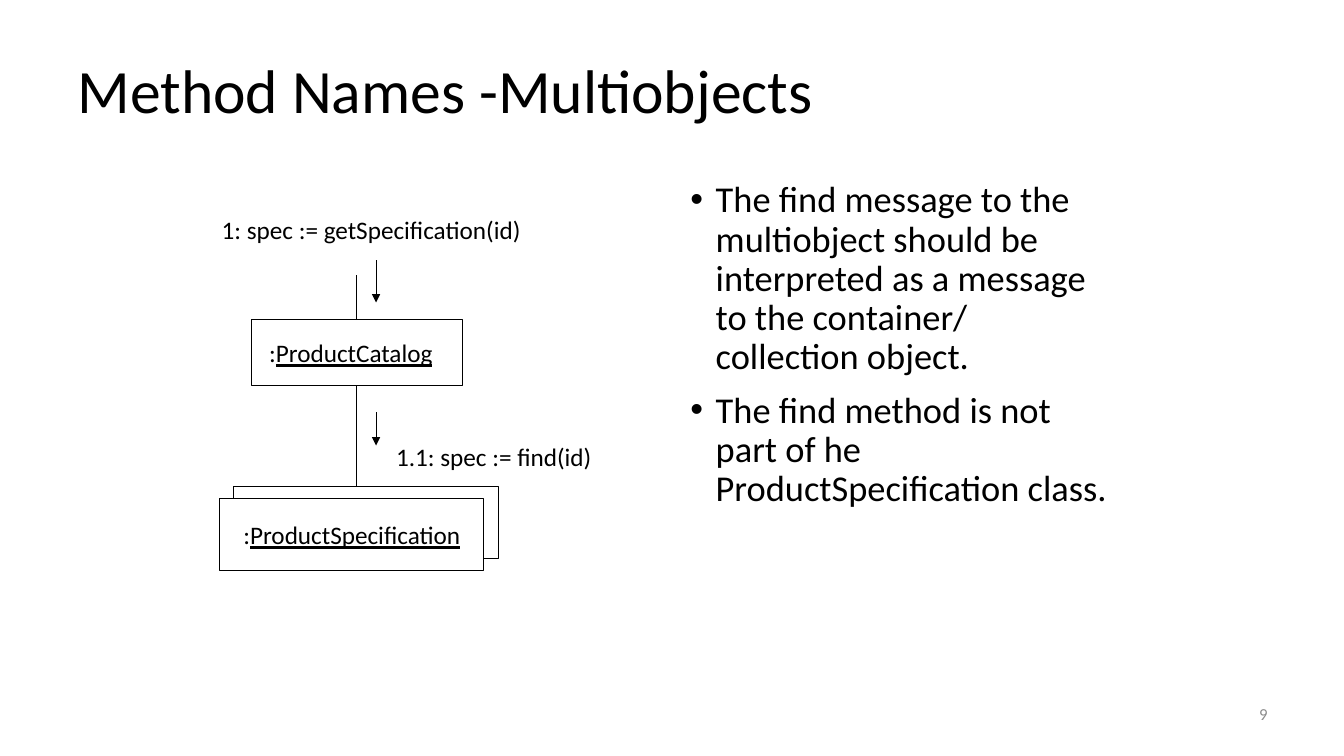
from dataclasses import dataclass

from lxml.etree import SubElement
from pptx import Presentation
from pptx.dml.color import RGBColor
from pptx.enum.shapes import MSO_CONNECTOR, MSO_SHAPE
from pptx.enum.text import MSO_ANCHOR, PP_ALIGN
from pptx.oxml.ns import qn
from pptx.util import Inches, Pt


@dataclass(frozen=True)
class Theme:
    font: str = "Calibri"
    ink: RGBColor = RGBColor(0, 0, 0)
    paper: RGBColor = RGBColor(255, 255, 255)
    muted: RGBColor = RGBColor(0x8C, 0x8C, 0x8C)
    title: int = 44
    body: int = 26
    label: int = 18
    number: int = 12
    line: float = 0.75
    thin: float = 0.25


THEME = Theme()


def add_run(p, text, size, color=THEME.ink, underline=None):
    r = p.add_run()
    r.text = text
    r.font.name = THEME.font
    r.font.size = Pt(size)
    r.font.color.rgb = color
    r.font.underline = underline


def add_text_box(shapes, box, anchor=MSO_ANCHOR.TOP, wrap=True):
    tf = shapes.add_textbox(*map(Inches, box)).text_frame
    tf.word_wrap = wrap
    tf.vertical_anchor = anchor
    return tf


def add_label(shapes, box, text):
    tf = add_text_box(shapes, box, wrap=False)
    add_run(tf.paragraphs[0], text, THEME.label)


def add_line(shapes, x, top, bottom, width=THEME.line, arrow=False):
    line = shapes.add_connector(
        MSO_CONNECTOR.STRAIGHT, Inches(x), Inches(top), Inches(x), Inches(bottom))
    line.line.color.rgb = THEME.ink
    line.line.width = Pt(width)
    if arrow:
        SubElement(line.line._get_or_add_ln(), qn("a:tailEnd"), type="triangle")
    SubElement(line._element.spPr, qn("a:effectLst"))
    return line


def add_object(shapes, box, name="", filled=True, align=PP_ALIGN.CENTER, inset=0.1):
    sp = shapes.add_shape(MSO_SHAPE.RECTANGLE, *map(Inches, box))
    sp.shadow.inherit = False
    if filled:
        sp.fill.solid()
        sp.fill.fore_color.rgb = THEME.paper
    else:
        sp.fill.background()
    sp.line.color.rgb = THEME.ink
    sp.line.width = Pt(THEME.line)
    if name:
        tf = sp.text_frame
        tf.word_wrap = False
        tf.margin_left = Inches(inset)
        tf.vertical_anchor = MSO_ANCHOR.MIDDLE
        p = tf.paragraphs[0]
        p.alignment = align
        add_run(p, ":", THEME.label)
        add_run(p, name, THEME.label, underline=True)
    return sp


def add_title(s, box, text):
    p = add_text_box(s.shapes, box, MSO_ANCHOR.MIDDLE).paragraphs[0]
    p.line_spacing = 0.9
    add_run(p, text, THEME.title)


def add_bullets(s, box, items):
    tf = add_text_box(s.shapes, box)
    for i, text in enumerate(items):
        p = tf.add_paragraph() if i else tf.paragraphs[0]
        p.line_spacing = 0.9
        p.space_before = Pt(10)
        pPr = p._p.get_or_add_pPr()
        pPr.set("marL", str(Inches(0.25)))
        pPr.set("indent", str(-Inches(0.25)))
        SubElement(pPr, qn("a:buFont"), typeface="Arial")
        SubElement(pPr, qn("a:buChar"), char="•")
        add_run(p, text, THEME.body)


def add_multiobject(s, box, name):
    left, top, width, height = box
    shift_x, shift_y = 0.14, 0.12
    w, h = width - shift_x, height - shift_y
    group = s.shapes.add_group_shape()
    add_object(group.shapes, (left + shift_x, top, w, h))
    add_object(group.shapes, (left, top + shift_y, w, h), name)


def add_collaboration(s, box):
    left, top, width, height = box
    axis = left + 1.44
    arrow_x = left + 1.63
    stack_top = top + 2.75
    catalog_top = top + 1.09
    catalog_bottom = catalog_top + 0.66

    add_label(s.shapes, (left, top, 3.21, 0.4), "1: spec := getSpecification(id)")
    add_line(s.shapes, arrow_x, top + 0.5, top + 0.92, arrow=True)
    catalog = add_object(
        s.shapes, (axis - 1.05, catalog_top, 2.1, 0.66), "ProductCatalog",
        filled=False, align=PP_ALIGN.LEFT, inset=0.18)
    incoming = add_line(s.shapes, axis, top + 0.65, catalog_top)
    incoming.end_connect(catalog, 0)

    add_multiobject(
        s, (left + 0.08, stack_top, 2.76, height - 2.75), "ProductSpecification")
    link = add_line(s.shapes, axis, catalog_bottom, stack_top)
    link.begin_connect(catalog, 2)
    add_line(s.shapes, arrow_x, top + 2.01, top + 2.34, THEME.thin, arrow=True)
    add_label(s.shapes, (left + width - 2.17, top + 2.25, 2.17, 0.4),
              "1.1: spec := find(id)")


def add_slide_number(s, box, text):
    p = add_text_box(s.shapes, box, MSO_ANCHOR.MIDDLE).paragraphs[0]
    p.alignment = PP_ALIGN.RIGHT
    add_run(p, text, THEME.number, THEME.muted)


def main():
    prs = Presentation()
    prs.slide_width, prs.slide_height = Inches(13.33), Inches(7.5)
    s = prs.slides.add_slide(prs.slide_layouts[6])
    add_title(s, (0.67, 0.3, 12, 1.25), "Method Names -Multiobjects")
    add_collaboration(s, (2.1, 2.08, 3.9, 3.58))
    add_bullets(s, (6.75, 1.75, 4.41, 4.95), [
        "The find message to the multiobject should be interpreted as a message "
        "to the container/ collection object.",
        "The find method is not part of he ProductSpecification class.",
    ])
    add_slide_number(s, (9.56, 6.83, 3.11, 0.5), "9")
    prs.save("out.pptx")


if __name__ == "__main__":
    main()
